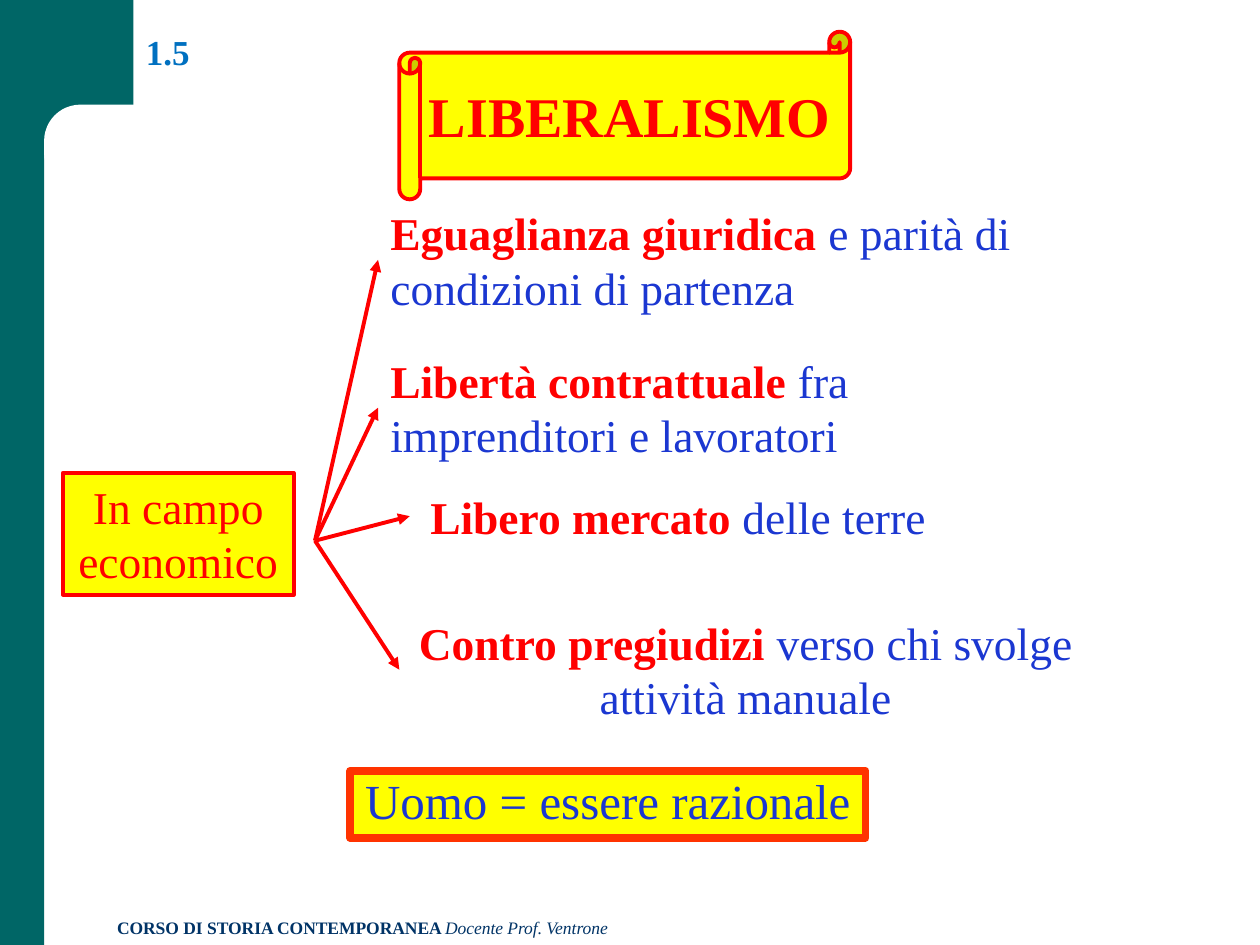
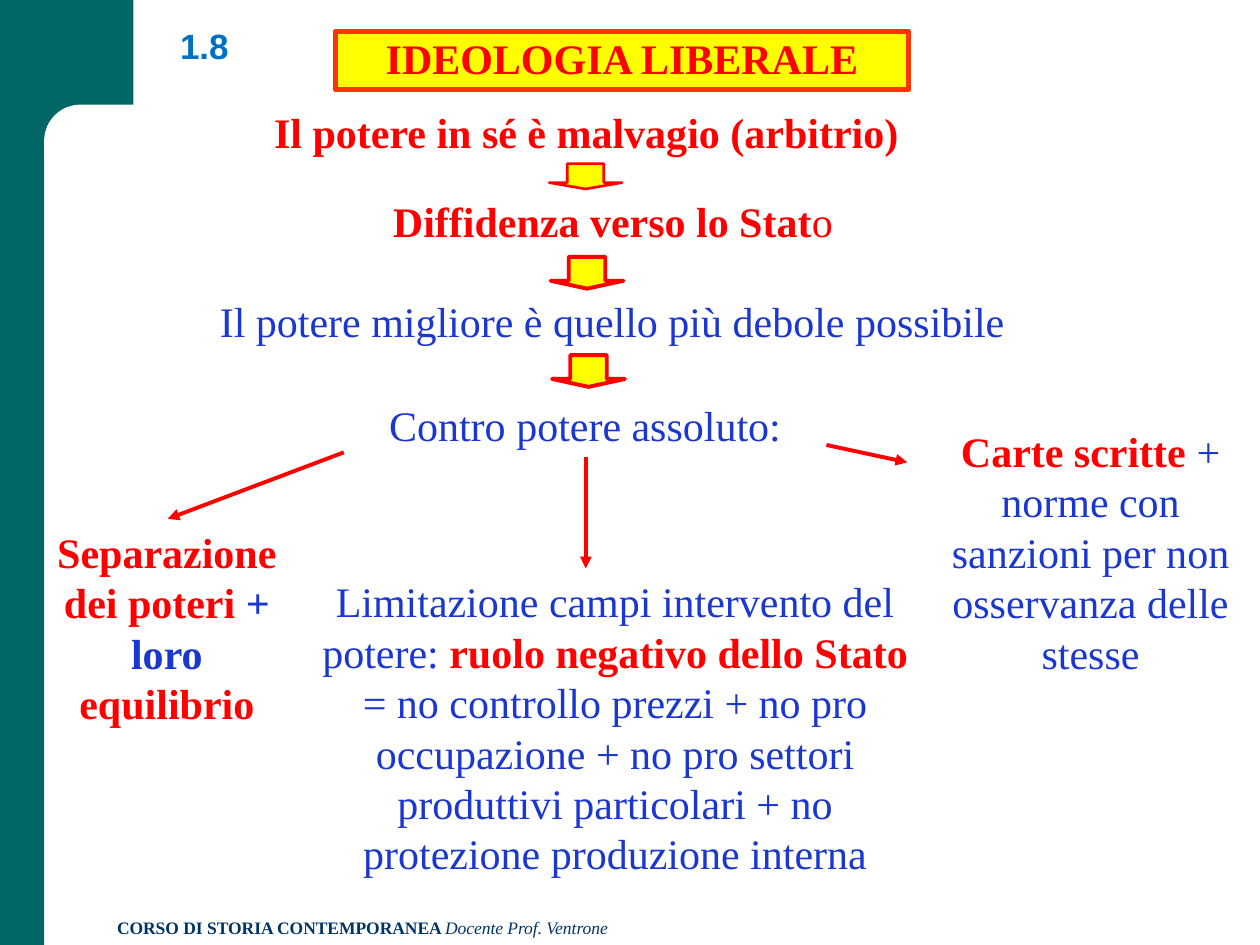
import pptx
import pptx.util
import pptx.dml.color
import pptx.enum.shapes
import pptx.enum.text
import pptx.oxml
import pptx.oxml.ns

Cm, Pt = pptx.util.Cm, pptx.util.Pt
Kind = pptx.enum.shapes.MSO_SHAPE
Align = pptx.enum.text.PP_ALIGN
Anchor = pptx.enum.text.MSO_ANCHOR

GREEN, WHITE, YELLOW = "006666", "FFFFFF", "FFFF00"
RED, ORANGE, BLUE = "FF0000", "FF3300", "1B37D1"
SKY, NAVY = "0070C0", "003366"
SERIF, SANS = "Times New Roman", "Arial"


def tint(code):
    return pptx.dml.color.RGBColor.from_string(code)


class Deck:
    def __init__(self):
        self.show = pptx.Presentation()
        self.show.slide_width, self.show.slide_height = Cm(25.4), Cm(19.05)
        self.slide = None

    def page(self):
        """Start a slide with the green band, its round corner and the footer."""
        self.slide = self.show.slides.add_slide(self.show.slide_layouts[6])
        self.shape(Kind.RECTANGLE, (0, 0, 0.89, 19.05), GREEN)
        self.shape(Kind.RECTANGLE, (0, 0, 2.69, 2.97), GREEN)
        self.shape(Kind.ROUNDED_RECTANGLE, (0.89, 2.11, 15.39, 1.7), WHITE,
                   turns=(0.43,))
        self.text((2.11, 18.36, 15.67, 0.69),
                  [("CORSO DI STORIA CONTEMPORANEA ", NAVY, "b"),
                   ("Docente Prof. Ventrone", NAVY, "i")], 10, Align.LEFT)

    def shape(self, kind, box, fill, line=None, width=2.25, turns=()):
        item = self.slide.shapes.add_shape(kind, *map(Cm, box))
        item.shadow.inherit = False
        item.fill.solid()
        item.fill.fore_color.rgb = tint(fill)
        if line:
            item.line.color.rgb = tint(line)
            item.line.width = Pt(width)
        else:
            item.line.fill.background()
        for spot, turn in enumerate(turns):
            item.adjustments[spot] = turn
        return item

    def letter(self, item, runs, size, align=Align.CENTER, anchor=Anchor.TOP,
               wrap=True, font=SERIF, space=None):
        """Fill an item with one paragraph of (text, colour, "b" or "i") runs."""
        frame = item.text_frame
        frame.word_wrap = wrap
        frame.vertical_anchor = anchor
        para = frame.paragraphs[0]
        para.alignment = align
        para.line_spacing = space
        para.font.size = Pt(size)
        para.font.name = font
        for words, color, style in runs:
            run = para.add_run()
            run.text = words
            run.font.color.rgb = tint(color)
            run.font.bold = style == "b"
            run.font.italic = style == "i"

    def text(self, box, runs, size, *args, **style):
        item = self.slide.shapes.add_textbox(*map(Cm, box))
        self.letter(item, runs, size, *args, **style)

    def label(self, box, words, font=SERIF):
        self.text(box, [(words, SKY, "b")], 20, Align.LEFT, Anchor.BOTTOM,
                  font=font, space=0.9)

    def arrow(self, start, end):
        link = self.slide.shapes.add_connector(
            pptx.enum.shapes.MSO_CONNECTOR.STRAIGHT, *map(Cm, start + end))
        link.line.color.rgb = tint(RED)
        link.line.width = Pt(2.25)
        props = link._element.spPr
        head = pptx.oxml.parse_xml(
            f'<a:tailEnd {pptx.oxml.ns.nsdecls("a")} type="triangle"/>')
        props.find(pptx.oxml.ns.qn("a:ln")).append(head)
        props.append(pptx.oxml.parse_xml(
            f'<a:effectLst {pptx.oxml.ns.nsdecls("a")}/>'))


def liberty(deck):
    deck.page()
    deck.label((2.69, 0.53, 1.7, 1.07), "1.5")
    scroll = deck.shape(Kind.HORIZONTAL_SCROLL, (8.05, 0.64, 9.09, 3.38),
                        YELLOW, RED)
    deck.letter(scroll, [("LIBERALISMO", RED, "b")], 32,
                anchor=Anchor.MIDDLE, wrap=False)
    field = deck.shape(Kind.RECTANGLE, (1.27, 9.53, 4.65, 2.46), YELLOW, RED)
    deck.letter(field, [("In campo economico", RED, "")], 26)

    points = [
        ((7.62, 4.01, 16.71, 2.46), Align.LEFT,
         "Eguaglianza giuridica ", "e parità di condizioni di partenza"),
        ((7.62, 6.99, 13.97, 2.46), Align.LEFT,
         "Libertà contrattuale ", "fra imprenditori e lavoratori"),
        ((8.26, 9.73, 10.82, 1.35), Align.CENTER,
         "Libero mercato ", "delle terre"),
        ((8.05, 12.27, 13.97, 2.46), Align.CENTER,
         "Contro pregiudizi ", "verso chi svolge attività manuale"),
    ]
    for box, align, key, rest in points:
        left, top, _, high = box
        deck.text(box, [(key, RED, "b"), (rest, BLUE, "")], 26, align,
                  wrap=high > 2)
        deck.arrow((6.35, 10.9), (left, top + high / 2))

    motto = deck.shape(Kind.RECTANGLE, (7.06, 15.54, 10.39, 1.35),
                       YELLOW, ORANGE, 4.5)
    deck.letter(motto, [("Uomo = essere razionale", BLUE, "")], 28,
                wrap=False, space=0.9)


def power(deck):
    deck.page()
    deck.label((3.38, 0, 1.7, 1.47), "1.8", SANS)
    title = deck.shape(Kind.RECTANGLE, (6.76, 0.64, 11.56, 1.17),
                       YELLOW, ORANGE, 3)
    deck.letter(title, [("IDEOLOGIA LIBERALE", RED, "b")], 24, space=0.9)

    steps = [
        ((5.05, 2.03, 13.54, 1.27),
         [("Il potere in sé è malvagio (arbitrio)", RED, "b")]),
        ((7.67, 3.81, 9.37, 1.27),
         [("Diffidenza verso lo Stat", RED, "b"), ("o", RED, "")]),
        ((3.81, 5.84, 17.07, 1.27),
         [("Il potere migliore è quello più debole possibile", BLUE, "")]),
        ((7.44, 7.92, 8.71, 1.27), [("Contro potere assoluto:", BLUE, "")]),
    ]
    for box, runs in steps:
        deck.text(box, runs, 24, anchor=Anchor.MIDDLE, wrap=False)

    limits = [
        ((0.84, 10.46, 5.05, 4.37),
         [("Separazione dei poteri ", RED, "b"), ("+ loro ", BLUE, "b"),
          ("equilibrio", RED, "b")]),
        ((6.2, 11.46, 12.4, 6.4),
         [("Limitazione campi intervento del potere: ", BLUE, ""),
          ("ruolo negativo dello Stato ", RED, "b"),
          ("= no controllo prezzi + no pro occupazione + no pro settori "
           "produttivi particolari + no protezione produzione interna",
           BLUE, "")]),
        ((18.62, 8.43, 6.73, 5.38),
         [("Carte scritte ", RED, "b"),
          ("+ norme con sanzioni per non osservanza delle stesse", BLUE, "")]),
    ]
    for box, runs in limits:
        deck.text(box, runs, 24, anchor=Anchor.MIDDLE)

    for left, top, high, width in [(11.07, 3.3, 0.51, 1.5),
                                   (11.1, 5.18, 0.64, 2.25),
                                   (11.13, 7.16, 0.64, 2.25)]:
        deck.shape(Kind.DOWN_ARROW, (left, top, 1.47, high), YELLOW, RED,
                   width, (0.5, 0.25))
    for start, end in [((6.93, 9.12), (3.38, 10.46)),
                       ((11.81, 9.22), (11.81, 11.46)),
                       ((16.66, 8.97), (18.29, 9.32))]:
        deck.arrow(start, end)


def main():
    deck = Deck()
    liberty(deck)
    power(deck)
    deck.show.save("out.pptx")


if __name__ == "__main__":
    main()
